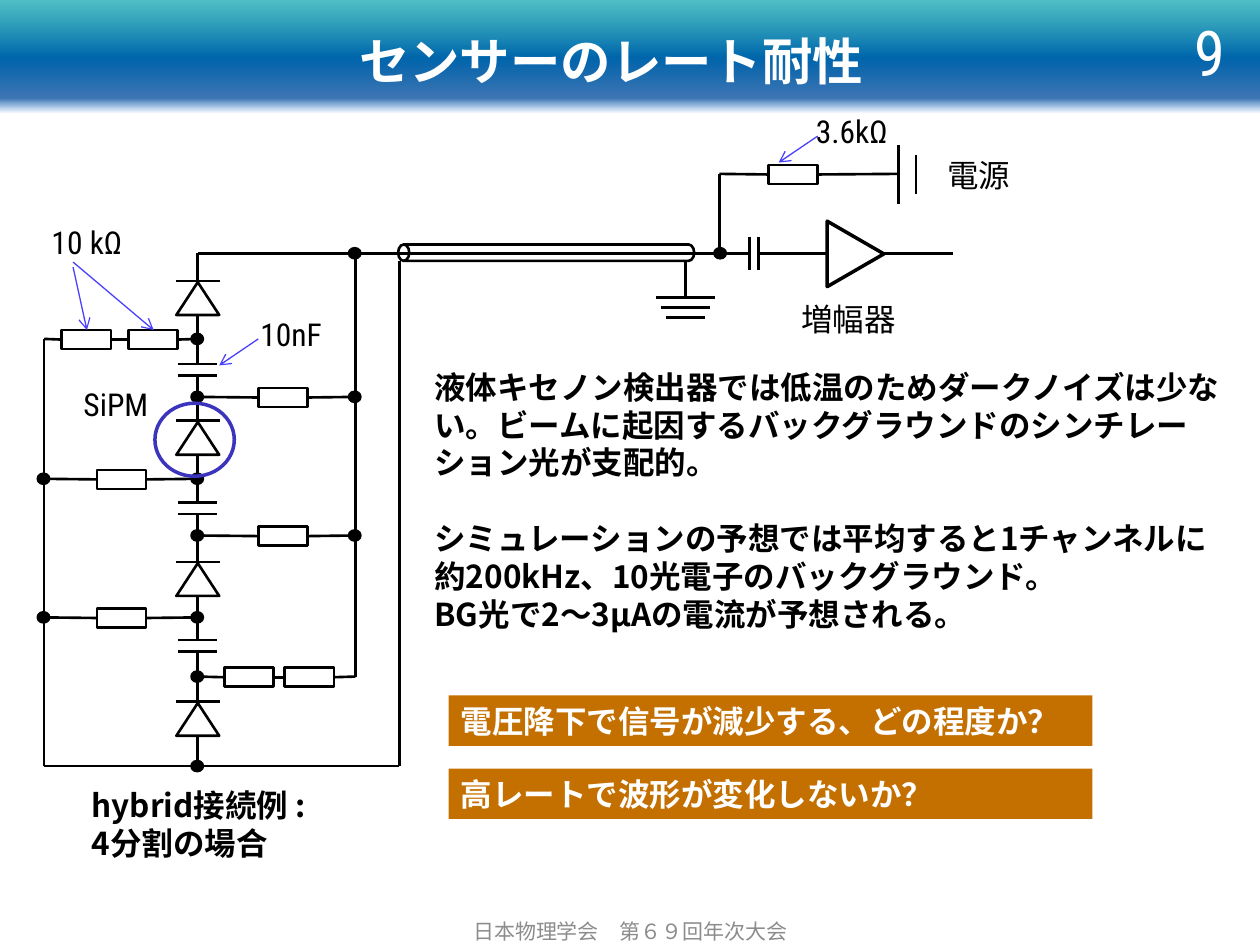
from lxml.etree import SubElement as Sub
from pptx import Presentation
from pptx.dml.color import RGBColor
from pptx.enum.shapes import MSO_CONNECTOR as Conn, MSO_SHAPE as Kind
from pptx.enum.text import MSO_ANCHOR as Anchor, PP_ALIGN as Align
from pptx.oxml import parse_xml
from pptx.oxml.ns import nsdecls, qn
from pptx.util import Inches, Pt

CJK, LATIN = "Noto Sans CJK JP", "Roboto Condensed"
BLACK, WHITE, BLUE = "000000", "FFFFFF", "4A41FE"
# Rails of the circuit, from left to right, and the signal line
LEFT, MID, RIGHT, SHIELD = 0.35, 1.57, 2.82, 3.17
SIGNAL = 2.01


def color(code):
    return RGBColor.from_string(code)


def style(frame, text, size, font, code, bold=False, align=Align.LEFT):
    """Fill a text frame and format all of its runs."""
    frame.word_wrap = True
    frame.text = text
    for para in frame.paragraphs:
        para.alignment = align
        para.line_spacing = Pt(round(size * 1.2, 1))
        for run in para.runs:
            run.font.size = Pt(size)
            run.font.bold = bold
            run.font.color.rgb = color(code)
            run.font.name = font
            Sub(run._r.get_or_add_rPr(), qn("a:ea")).set("typeface", font)


def label(shapes, box, text, size=18, font=CJK, code=BLACK, **more):
    item = shapes.add_textbox(*map(Inches, box))
    style(item.text_frame, text, size, font, code, **more)
    return item.text_frame


def shape(shapes, kind, box, line=BLACK, fill=None, width=1.5):
    item = shapes.add_shape(kind, *map(Inches, box))
    item.shadow.inherit = False
    if fill:
        item.fill.solid()
        item.fill.fore_color.rgb = color(fill)
    else:
        item.fill.background()
    if line:
        item.line.color.rgb = color(line)
        item.line.width = Pt(width)
    else:
        item.line.fill.background()
    return item


def wire(shapes, start, end, code=BLACK, width=1.5):
    item = shapes.add_connector(Conn.STRAIGHT, *map(Inches, start + end))
    item.line.color.rgb = color(code)
    item.line.width = Pt(width)
    Sub(item._element.spPr, qn("a:effectLst"))
    return item


def arrow(shapes, start, end):
    item = wire(shapes, start, end, BLUE, 0.75)
    Sub(item.line._get_or_add_ln(), qn("a:tailEnd")).set("type", "arrow")


def rail(shapes, x, stops):
    """Vertical wire, one piece between each pair of nodes."""
    for top, low in zip(stops, stops[1:]):
        wire(shapes, (x, top), (x, low))


def row(shapes, start, y, lefts, end):
    """Horizontal wire with resistors in series."""
    last, x = None, start
    for left in lefts:
        part = shape(shapes, Kind.RECTANGLE, (left, y - 0.07, 0.39, 0.15))
        link = wire(shapes, (x, y), (left, y))
        if last:
            link.begin_connect(last, 3)
        link.end_connect(part, 1)
        last, x = part, left + 0.39
    wire(shapes, (x, y), (end, y)).begin_connect(last, 3)


def dot(shapes, x, y):
    shape(shapes, Kind.OVAL, (x - 0.05, y - 0.04, 0.09, 0.08), fill=BLACK)


def plate(shapes, x, y, span):
    """Horizontal bar centred on x."""
    wire(shapes, (x - span / 2, y), (x + span / 2, y))


def diode(shapes, y):
    plate(shapes, MID, y - 0.01, 0.35)
    shape(shapes, Kind.ISOSCELES_TRIANGLE, (MID - 0.17, y, 0.34, 0.26))


def header(slide):
    title = slide.shapes.title
    title.left, title.top, title.width, title.height = map(
        Inches, (0.35, 0.21, 9, 0.54))
    style(title.text_frame, "センサーのレート耐性", 28.8, CJK, WHITE, True,
          Align.CENTER)
    title.text_frame.vertical_anchor = Anchor.MIDDLE
    # Gradient band behind the title
    band = shape(slide.shapes, Kind.RECTANGLE, (0, 0, 10, 0.92), None, WHITE)
    stops = "".join(
        f'<a:gs pos="{pos}000"><a:srgbClr val="{code}">'
        f'<a:alpha val="{alpha}000"/></a:srgbClr></a:gs>'
        for pos, code, alpha in ((0, "19ACB3", 75), (50, "0066AC", 100),
                                 (85, "004B9E", 75), (98, "005CBF", 0)))
    grad = parse_xml(f'<a:gradFill {nsdecls("a")}><a:gsLst>{stops}</a:gsLst>'
                     '<a:lin ang="5400000" scaled="0"/></a:gradFill>')
    solid = band._element.spPr.find(qn("a:solidFill"))
    solid.getparent().replace(solid, grad)
    title._element.addprevious(band._element)
    # Page number and footer
    page = label(slide.shapes, (8.94, 0.21, 0.88, 0.4), "9", 36, LATIN,
                 WHITE, align=Align.RIGHT)
    page.vertical_anchor = Anchor.MIDDLE
    foot = label(slide.shapes, (3.42, 7.21, 3.17, 0.32),
                 "日本物理学会　第６９回年次大会", 12, code="8C8C8C",
                 align=Align.CENTER)
    foot.vertical_anchor = Anchor.BOTTOM
    foot.margin_left = foot.margin_right = Inches(0.04)
    foot.margin_top = foot.margin_bottom = Inches(0.04)


def sensor(shapes):
    # Diodes and capacitors in turn down the middle
    diodes, caps = (2.24, 3.35, 4.47, 5.58), (2.89, 3.99, 5.08)
    for y in diodes:
        diode(shapes, y)
    for y in caps:
        plate(shapes, MID, y, 0.31)
        plate(shapes, MID, y + 0.09, 0.31)
    tops = [SIGNAL] + [y + 0.09 for y in caps]
    for top, y, low in zip(tops, diodes, caps + (6.08,)):
        wire(shapes, (MID, top), (MID, y))
        wire(shapes, (MID, y + 0.26), (MID, low))
    # Rails and frame
    rail(shapes, LEFT, (2.69, 3.81, 4.9, 6.08))
    rail(shapes, RIGHT, (SIGNAL, 3.15, 4.25, 5.37))
    rail(shapes, SHIELD, (2.07, 6.08))
    wire(shapes, (MID, SIGNAL), (RIGHT, SIGNAL))
    for x in (LEFT, SHIELD):
        wire(shapes, (x, 6.08), (MID, 6.08))
    # Resistor branches
    row(shapes, LEFT, 2.69, (0.49, 1.02), MID)
    for y in (3.8, 4.9):
        row(shapes, LEFT, y, (0.77,), MID)
        dot(shapes, LEFT, y)
    for y in (3.15, 4.25):
        row(shapes, MID, y, (2.05,), RIGHT)
        dot(shapes, RIGHT, y)
    row(shapes, MID, 5.37, (1.78, 2.26), RIGHT)
    for y in (2.69, 3.15, 3.8, 4.25, 4.9, 5.37, 6.08):
        dot(shapes, MID, y)
    shape(shapes, Kind.OVAL, (1.23, 3.2, 0.63, 0.58), "3B35BD", width=2)


def readout(shapes):
    # Shielded cable with ground
    wire(shapes, (RIGHT, SIGNAL), (5.72, SIGNAL))
    cable = shape(shapes, Kind.CAN, (4.27, 0.83, 0.13, 2.35))
    cable.rotation = 270
    cable.adjustments[0] = 0.68
    wire(shapes, (5.44, 2.08), (5.44, 2.36))
    for i in range(3):
        plate(shapes, 5.44, 2.36 + 0.08 * i, 0.47 - 0.08 * i)
    # Coupling capacitor and amplifier
    wire(shapes, (5.72, SIGNAL), (5.95, SIGNAL))
    rail(shapes, 5.95, (1.88, 2.14))
    rail(shapes, 6.02, (1.88, 2.14))
    wire(shapes, (6.02, SIGNAL), (6.57, SIGNAL))
    amp = shape(shapes, Kind.ISOSCELES_TRIANGLE, (6.53, 1.79, 0.52, 0.45),
                width=2)
    amp.rotation = 90
    wire(shapes, (7.02, SIGNAL), (7.56, SIGNAL))
    # Power supply
    rail(shapes, 5.71, (1.38, SIGNAL))
    row(shapes, 5.71, 1.38, (6.1,), 7.13)
    rail(shapes, 7.13, (1.15, 1.62))
    rail(shapes, 7.27, (1.23, 1.54))
    for x in (RIGHT, 5.72):
        dot(shapes, x, SIGNAL)


def notes(shapes):
    # Part labels with their arrows
    for text, box in (("10 kΩ", (0.12, 1.72, 1.14, 0.48)),
                      ("10nF", (1.82, 2.45, 0.98, 0.48)),
                      ("SiPM", (0.35, 3.01, 1.14, 0.48)),
                      ("3.6kΩ", (6.27, 0.84, 0.98, 0.4))):
        label(shapes, box, text, font=LATIN, align=Align.CENTER)
    for start, end in (((2.05, 2.69), (1.74, 2.9)), ((0.58, 2.12), (0.69, 2.62)),
                       ((0.58, 2.08), (1.22, 2.62)), ((6.49, 1.08), (6.18, 1.29))):
        arrow(shapes, start, end)
    label(shapes, (6.26, 2.33, 1, 0.4), "増幅器")
    label(shapes, (7.42, 1.19, 0.79, 0.4), "電源")
    label(shapes, (0.63, 6.19, 1.97, 0.71), "hybrid接続例 :\n4分割の場合", bold=True)
    # Main text
    body = label(shapes, (3.35, 2.87, 6.47, 2.22), "\n".join((
        "液体キセノン検出器では低温のためダークノイズは少ない。"
        "ビームに起因するバックグラウンドのシンチレーション光が支配的。",
        "シミュレーションの予想では平均すると1チャンネルに",
        "約200kHz、10光電子のバックグラウンド。",
        "BG光で2～3µAの電流が予想される。")), bold=True)
    body.paragraphs[1].space_before = Pt(21.6)
    # Questions
    for y, text in ((5.52, "電圧降下で信号が減少する、どの程度か？"),
                    (6.1, "高レートで波形が変化しないか？")):
        bar = shape(shapes, Kind.RECTANGLE, (3.56, y, 5.11, 0.4), None, "C47000")
        style(bar.text_frame, text, 18, CJK, WHITE, True)


def main():
    deck = Presentation()
    deck.slide_width, deck.slide_height = Inches(10), Inches(7.5)
    slide = deck.slides.add_slide(deck.slide_layouts[5])
    header(slide)
    sensor(slide.shapes)
    readout(slide.shapes)
    notes(slide.shapes)
    deck.save("out.pptx")


if __name__ == "__main__":
    main()
